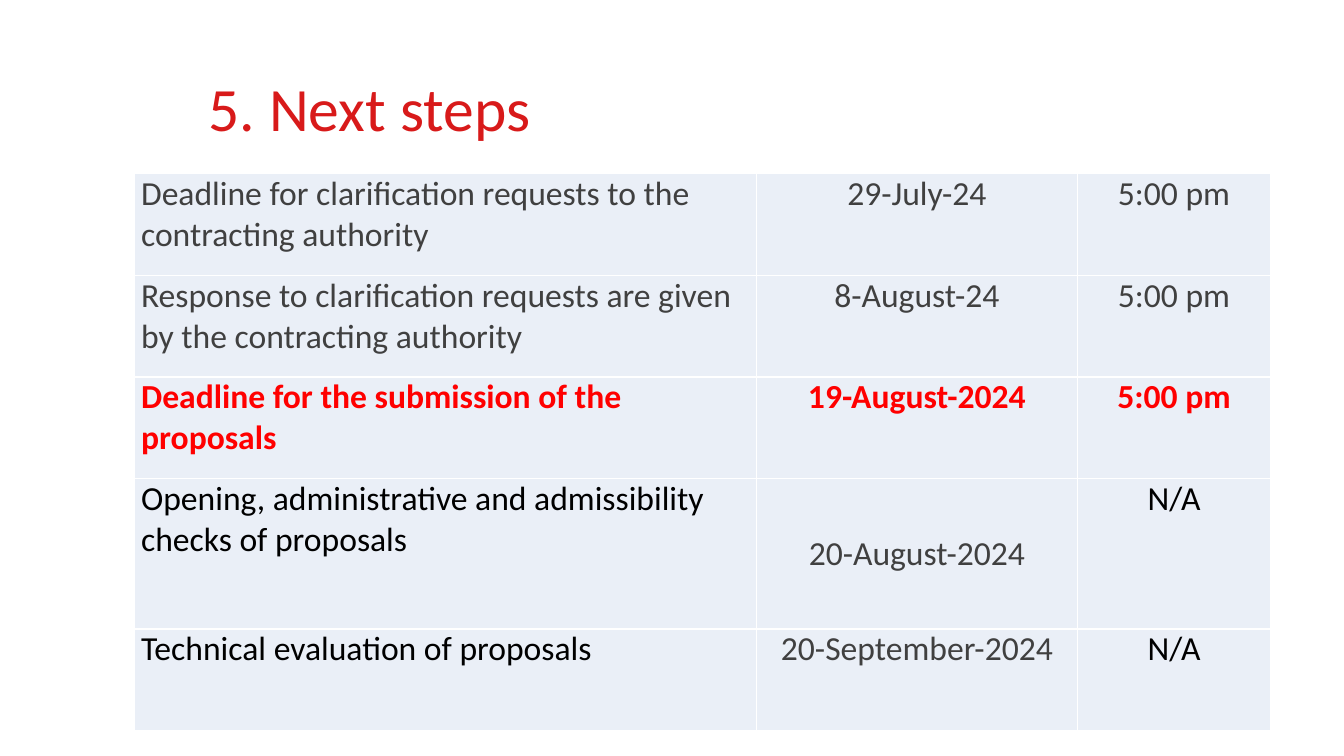
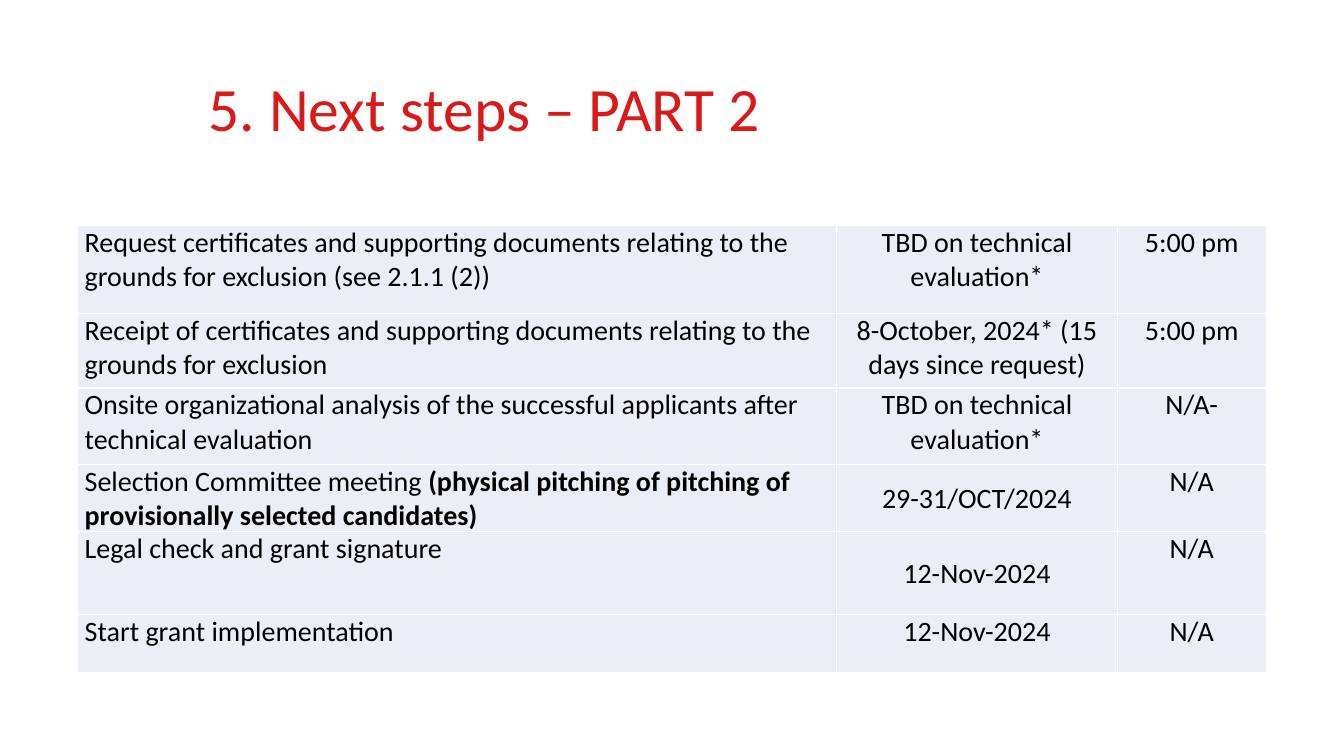
from dataclasses import dataclass

import pptx
import pptx.dml.color
import pptx.enum.text
import pptx.oxml
import pptx.oxml.ns
import pptx.util
from pptx.util import Inches

RGB = pptx.dml.color.RGBColor.from_string
ALIGN = pptx.enum.text.PP_ALIGN
ANCHOR = pptx.enum.text.MSO_ANCHOR


@dataclass
class Theme:
    font: str = "Calibri"
    title: str = "D81A1A"
    grey: str = "404040"
    black: str = "000000"
    alert: str = "FF0000"
    cell: str = "EAEFF7"
    border: str = "FFFFFF"
    title_size: int = 44


@dataclass
class Step:
    height: float
    task: str
    date: str
    time: str
    color: str = Theme.black
    date_color: str = ""
    bold: bool = False
    bold_ending: str = ""
    date_middle: bool = False


theme = Theme()

# Content: title, table left and top, column widths, text size, steps
schedules = [
    ("5. Next steps", 1.33, 1.72, (6.17, 3.19, 1.91), 24, [
        Step(1.01, "Deadline for clarification requests to the contracting authority",
             "29-July-24", "5:00 pm", theme.grey),
        Step(1.01, "Response to clarification requests are given by the contracting authority",
             "8-August-24", "5:00 pm", theme.grey),
        Step(1.01, "Deadline for the submission of the proposals",
             "19-August-2024", "5:00 pm", theme.alert, bold=True),
        Step(1.49, "Opening, administrative and admissibility checks of proposals",
             "20-August-2024", "N/A", date_color=theme.grey, date_middle=True),
        Step(1.01, "Technical evaluation of proposals",
             "20-September-2024", "N/A", date_color=theme.grey),
    ]),
    ("5. Next steps – PART 2", 0.77, 2.24, (7.53, 2.78, 1.48), 20, [
        Step(0.87, "Request certificates and supporting documents relating to the "
                   "grounds for exclusion (see 2.1.1 (2))",
             "TBD on technical evaluation*", "5:00 pm"),
        Step(0.74, "Receipt of certificates and supporting documents relating to the "
                   "grounds for exclusion",
             "8-October, 2024* (15 days since request)", "5:00 pm"),
        Step(0.76, "Onsite organizational analysis of the successful applicants after "
                   "technical evaluation",
             "TBD on technical evaluation*", "N/A-"),
        Step(0.58, "Selection Committee meeting ", "29-31/OCT/2024", "N/A",
             bold_ending="(physical pitching of pitching of provisionally selected candidates)",
             date_middle=True),
        Step(0.82, "Legal check and grant signature", "12-Nov-2024", "N/A", date_middle=True),
        Step(0.58, "Start grant implementation", "12-Nov-2024", "N/A"),
    ]),
]


def format_run(run, size, color, bold=False):
    run.font.name = theme.font
    run.font.size = pptx.util.Pt(size)
    run.font.color.rgb = RGB(color)
    run.font.bold = bold


def fill_and_border(cell):
    cell.fill.solid()
    cell.fill.fore_color.rgb = RGB(theme.cell)
    properties = cell._tc.get_or_add_tcPr()
    for position, side in enumerate("LRTB"):
        properties.insert(position, pptx.oxml.parse_xml(
            f'<a:ln{side} {pptx.oxml.ns.nsdecls("a")} w="12700"><a:solidFill>'
            f'<a:srgbClr val="{theme.border}"/></a:solidFill></a:ln{side}>'))


deck = pptx.Presentation()
deck.slide_width, deck.slide_height = Inches(13.33), Inches(7.5)

for title, left, top, widths, text_size, steps in schedules:
    slide = deck.slides.add_slide(deck.slide_layouts[6])

    # Title
    heading = slide.shapes.add_textbox(
        Inches(1.97), Inches(0.38), Inches(9.45), Inches(1.45)).text_frame
    heading.word_wrap = True
    heading.vertical_anchor = ANCHOR.MIDDLE
    heading.text = title
    heading.paragraphs[0].line_spacing = 0.9
    format_run(heading.paragraphs[0].runs[0], theme.title_size, theme.title)

    # Schedule grid
    schedule = slide.shapes.add_table(
        len(steps), len(widths), Inches(left), Inches(top),
        Inches(sum(widths)), Inches(sum(step.height for step in steps))).table
    schedule.first_row = schedule.horz_banding = False
    for column, width in zip(schedule.columns, widths):
        column.width = Inches(width)

    # Steps: task, date, time
    for row, step in zip(schedule.rows, steps):
        row.height = Inches(step.height)
        colors = (step.color, step.date_color or step.color, step.color)
        for index, text in enumerate((step.task, step.date, step.time)):
            cell = row.cells[index]
            fill_and_border(cell)
            middle = step.date_middle and index == 1
            cell.vertical_anchor = ANCHOR.MIDDLE if middle else ANCHOR.TOP
            cell.margin_left = cell.margin_right = Inches(0.01 if middle else 0.07)
            cell.margin_top = Inches(0.01 if middle else 0)
            cell.margin_bottom = 0

            paragraph = cell.text_frame.paragraphs[0]
            paragraph.text = text
            paragraph.alignment = ALIGN.CENTER if index else ALIGN.LEFT
            paragraph.space_after = pptx.util.Pt(6)
            format_run(paragraph.runs[0], text_size, colors[index], step.bold)
            if index == 0 and step.bold_ending:
                ending = paragraph.add_run()
                ending.text = step.bold_ending
                format_run(ending, text_size, step.color, bold=True)

deck.save("out.pptx")
